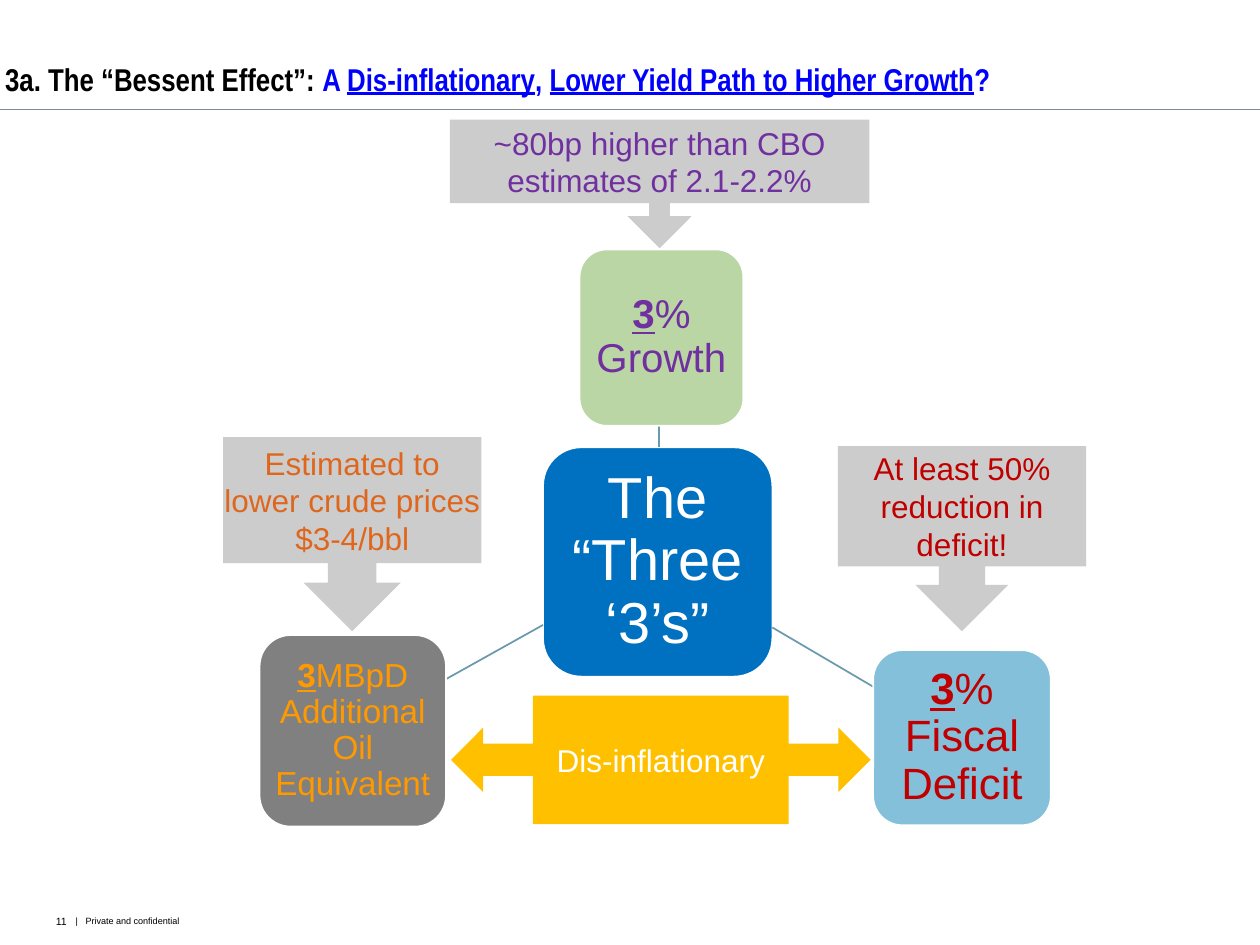
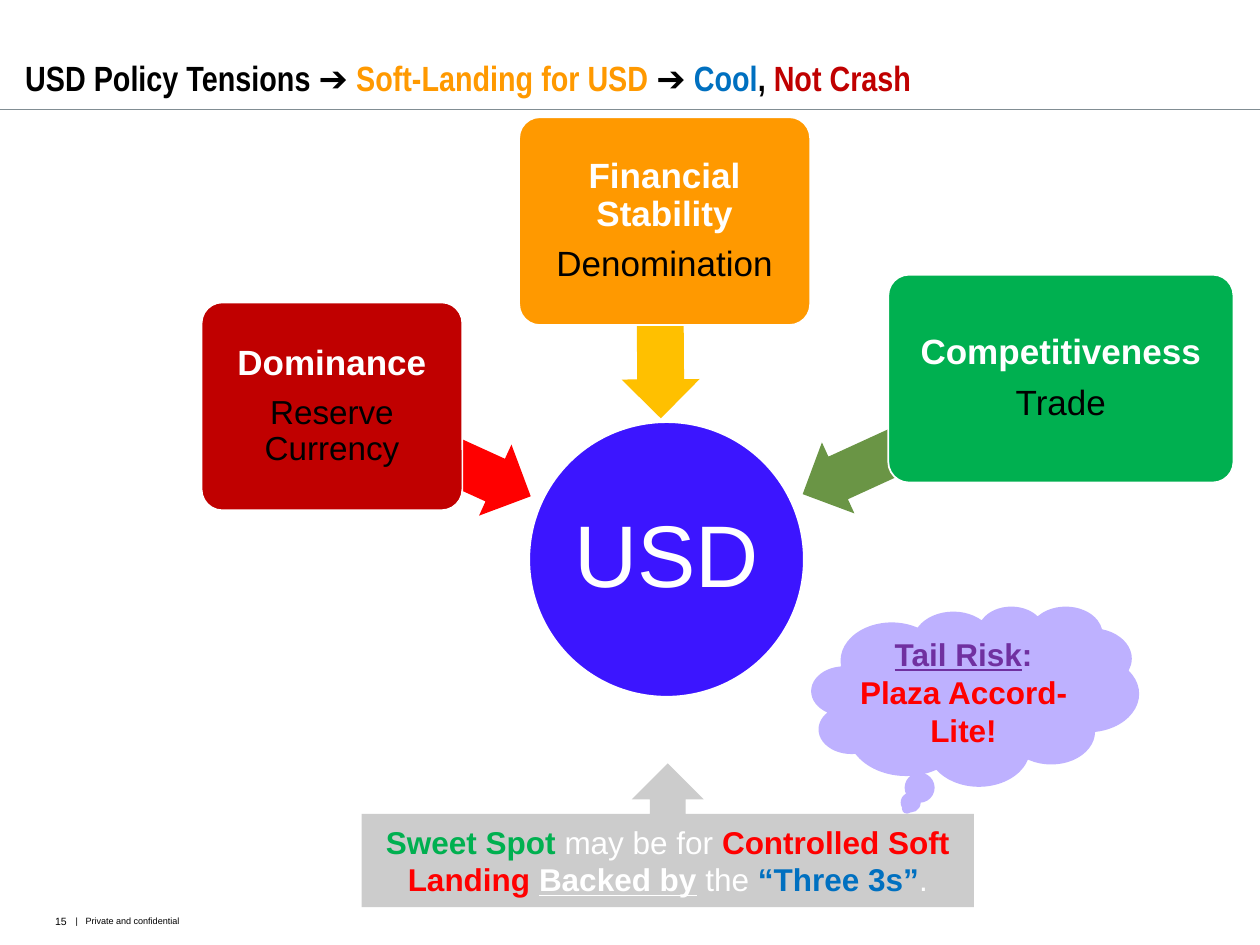
from dataclasses import dataclass

from lxml import etree
from pptx import Presentation
from pptx import util as u
from pptx.dml.color import RGBColor
from pptx.enum import shapes, text
from pptx.oxml import ns

SHAPE = shapes.MSO_SHAPE
ALIGN = text.PP_ALIGN
ANCHOR = text.MSO_ANCHOR


@dataclass(frozen=True)
class Theme:
    font: str = "Arial"
    title_font: str = "Arial Narrow"
    black: str = "000000"
    white: str = "FFFFFF"
    rule: str = "818D93"
    spoke: str = "6B9AAF"
    grey: str = "808080"
    light_grey: str = "CCCCCC"
    link_blue: str = "0000FF"
    blue: str = "0070C0"
    sky: str = "85C0DB"
    indigo: str = "3C15FF"
    lilac: str = "BEB1FF"
    purple: str = "7030A0"
    pale_green: str = "BBD6A5"
    green: str = "00B050"
    olive: str = "6A9545"
    orange: str = "FF9900"
    rust: str = "DF671D"
    amber: str = "FFC000"
    red: str = "FF0000"
    dark_red: str = "C00000"
    callout_size: float = 18
    heading_size: float = 20
    number_size: float = 6
    footer_size: float = 5.2


T = Theme()


def rgb(color):
    return RGBColor.from_string(color)


def add_run(p, content, color, size, style="", font=T.font):
    r = p.add_run()
    r.text = content
    r.font.name = font
    r.font.size = u.Pt(size)
    r.font.color.rgb = rgb(color)
    r.font.bold = "b" in style
    r.font.underline = "u" in style


def frame(sp, anchor=ANCHOR.MIDDLE, insets=(0, 0, 0, 0)):
    tf = sp.text_frame
    tf.word_wrap = True
    tf.vertical_anchor = anchor
    tf.margin_left, tf.margin_top, tf.margin_right, tf.margin_bottom = map(u.Inches, insets)
    return tf


def write(tf, paragraphs, align=ALIGN.CENTER, font=T.font, tight=False):
    for i, (size, runs) in enumerate(paragraphs):
        p = tf.add_paragraph() if i else tf.paragraphs[0]
        p.alignment = align
        if tight:
            p.line_spacing = 0.9
            p.space_after = u.Pt(size * 0.35)
        for content, color, *style in runs:
            add_run(p, content, color, size, "".join(style), font)


def add_text(s, box, paragraphs, anchor=ANCHOR.MIDDLE, insets=(0, 0, 0, 0), **kw):
    tf = frame(s.shapes.add_textbox(*map(u.Inches, box)), anchor, insets)
    write(tf, paragraphs, **kw)
    return tf


def add_line(s, start, end, color, width):
    cn = s.shapes.add_connector(shapes.MSO_CONNECTOR.STRAIGHT, *map(u.Inches, start + end))
    cn.line.color.rgb = rgb(color)
    cn.line.width = u.Pt(width)
    etree.SubElement(cn._element.spPr, ns.qn("a:effectLst"))


def add_block(s, kind, box, fill, adj=(), outline=None, rotation=0):
    sp = s.shapes.add_shape(kind, *map(u.Inches, box))
    sp.shadow.inherit = False
    sp.fill.solid()
    sp.fill.fore_color.rgb = rgb(fill)
    if outline:
        sp.line.color.rgb = rgb(outline)
        sp.line.width = u.Pt(1)
    else:
        sp.line.fill.background()
    for i, value in enumerate(adj):
        sp.adjustments[i] = value
    sp.rotation = rotation
    return sp


def add_node(s, kind, box, fill, paragraphs, inset, adj=()):
    sp = add_block(s, kind, box, fill, adj, outline=T.white)
    write(frame(sp, insets=(inset,) * 4), paragraphs, tight=True)


def add_callout(s, kind, box, fill, lines, adj=()):
    sp = add_block(s, kind, box, fill, adj)
    write(frame(sp), [(T.callout_size, runs) for runs in lines])


def add_arrow(s, box, fill, rotation):
    add_block(s, SHAPE.LEFT_ARROW, box, fill, (0.6, 0.5), rotation=rotation)


def add_base(prs, number, title_left, title_width, title_size, title):
    s = prs.slides.add_slide(prs.slide_layouts[6])
    add_line(s, (0, 0.87), (10, 0.87), T.rule, 0.5)
    add_text(s, (0, 7.12, 0.53, 0.38), [(T.number_size, [(number, T.black)])], align=ALIGN.RIGHT)
    tf = add_text(s, (0.53, 7.12, 8.21, 0.38), [], insets=(0.07, 0, 0.35, 0))
    p = tf.paragraphs[0]
    tabs = etree.SubElement(p._p.get_or_add_pPr(), ns.qn("a:tabLst"))
    etree.SubElement(tabs, ns.qn("a:tab"), pos=str(u.Inches(0.08)), algn="l")
    add_run(p, "|\tPrivate and confidential", T.black, T.footer_size)
    add_text(s, (title_left, 0, title_width, 0.87),
             [(title_size, [(content, color, "b", *style) for content, color, *style in title])],
             ANCHOR.BOTTOM, (0, 0.09, 0, 0.09), align=ALIGN.LEFT, font=T.title_font)
    return s


def build_three_threes(prs):
    s = add_base(prs, "11", 0.04, 8.98, 18, [
        ("3a. The “Bessent Effect”: ", T.black),
        ("A ", T.link_blue),
        ("Dis-inflationary", T.link_blue, "u"),
        (", ", T.link_blue),
        ("Lower Yield Path to Higher Growth", T.link_blue, "u"),
        ("?", T.link_blue),
    ])
    add_node(s, SHAPE.ROUNDED_RECTANGLE, (4.31, 3.55, 1.82, 1.82), T.blue,
             [(33, [("The “Three ‘3’s”", T.white)])], 0.09)
    for start, end in [((5.23, 3.55), (5.23, 3.38)),
                       ((6.13, 4.98), (6.93, 5.45)),
                       ((4.31, 4.96), (3.54, 5.39))]:
        add_line(s, start, end, T.spoke, 1)
    for box, fill, color, size, label, inset in [
        ((4.6, 1.98, 1.3, 1.4), T.pale_green, T.purple, 23, "% Growth", 0.06),
        ((6.93, 5.16, 1.41, 1.39), T.sky, T.dark_red, 25, "% Fiscal Deficit", 0.07),
        ((2.06, 5.04, 1.48, 1.52), T.grey, T.orange, 19, "MBpD Additional Oil Equivalent", 0.05),
    ]:
        add_node(s, SHAPE.ROUNDED_RECTANGLE, box, fill,
                 [(size, [("3", color, "bu"), (label, color)])], inset)
    add_callout(s, SHAPE.LEFT_RIGHT_ARROW_CALLOUT, (3.58, 5.52, 3.33, 1.02), T.amber,
                [[("Dis-inflationary", T.white)]], (0.25, 0.25, 0.25, 0.61))
    for box, color, label, adj in [
        ((1.77, 3.47, 2.05, 1.54), T.rust, "Estimated to lower crude prices $3-4/bbl", ()),
        ((6.65, 3.54, 1.97, 1.47), T.dark_red, "At least 50% reduction in deficit!", ()),
        ((3.57, 0.95, 3.33, 1.02), T.purple, "~80bp higher than CBO estimates of 2.1-2.2%",
         (0.16, 0.25, 0.25, 0.65)),
    ]:
        add_callout(s, SHAPE.DOWN_ARROW_CALLOUT, box, T.light_grey, [[(label, color)]], adj)


def build_usd_tensions(prs):
    s = add_base(prs, "15", 0.2, 9.45, 20, [
        ("USD Policy Tensions ➔ ", T.black),
        ("Soft-Landing for USD", T.orange),
        (" ➔ ", T.black),
        ("Cool", T.blue),
        (", ", T.black),
        ("Not Crash", T.dark_red),
    ])
    add_node(s, SHAPE.OVAL, (4.2, 3.35, 2.18, 2.18), T.indigo, [(50, [("USD", T.white)])], 0.03)
    for arrow, rotation, arrow_fill, box, fill, heading, detail, size in [
        ((2.56, 3.27, 1.73, 0.62), 204.5, T.red,
         (1.6, 2.4, 2.07, 1.65), T.dark_red, "Dominance", "Reserve Currency", 19),
        ((4.49, 2.26, 1.5, 0.62), 269.6, T.amber,
         (4.12, 0.93, 2.31, 1.65), T.orange, "Financial Stability", "Denomination", 20),
        ((6.27, 3.15, 2.22, 0.62), 335.4, T.olive,
         (7.05, 2.18, 2.74, 1.65), T.green, "Competitiveness", "Trade", 20),
    ]:
        add_arrow(s, arrow, arrow_fill, rotation)
        add_node(s, SHAPE.ROUNDED_RECTANGLE, box, fill,
                 [(T.heading_size, [(heading, T.white, "b")]), (size, [(detail, T.black)])],
                 0.04, (0.1,))
    add_callout(s, SHAPE.CLOUD_CALLOUT, (6.44, 4.81, 2.6, 1.43), T.lilac, [
        [("Tail Risk", T.purple, "bu"), (":", T.purple, "b")],
        [("Plaza Accord-Lite!", T.red, "b")],
    ])
    add_callout(s, SHAPE.UP_ARROW_CALLOUT, (2.87, 6.06, 4.86, 1.14), T.light_grey, [[
        ("Sweet Spot ", T.green, "b"),
        ("may be for ", T.white),
        ("Controlled Soft Landing ", T.red, "b"),
        ("Backed by", T.white, "bu"),
        (" the ", T.white),
        ("“Three 3s”", T.blue, "b"),
        (".", T.white),
    ]])


def main():
    prs = Presentation()
    prs.slide_width, prs.slide_height = u.Inches(10), u.Inches(7.5)
    build_three_threes(prs)
    build_usd_tensions(prs)
    prs.save("out.pptx")


if __name__ == "__main__":
    main()
